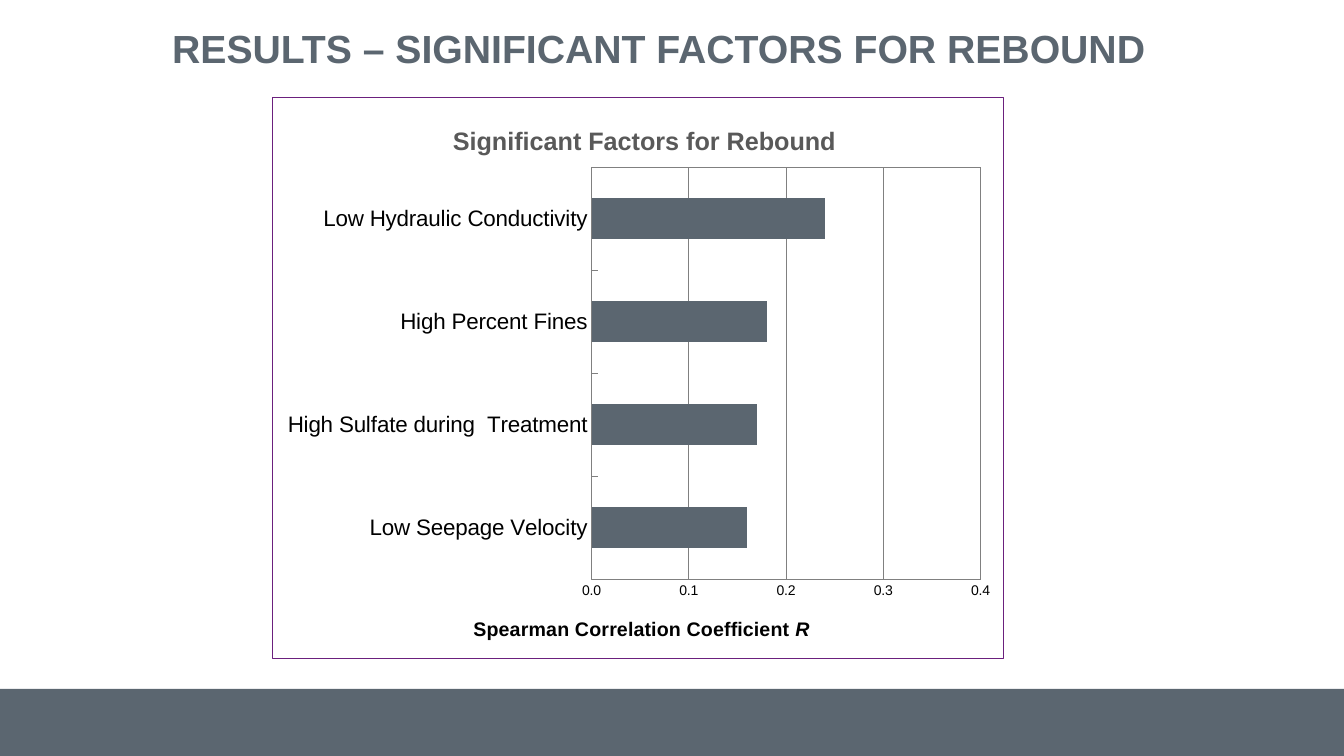
from dataclasses import dataclass

from lxml import etree
from pptx import Presentation
from pptx.chart import data
from pptx.dml import color
from pptx.enum import chart as ch, shapes, text
from pptx.oxml import ns
from pptx.util import Pt

COLORS = {"slate": "5B6670", "purple": "6B207D", "grid": "808080",
          "heading": "595959", "black": "000000", "white": "FFFFFF"}
FONT = "Arial"
W, H = 960, 540
BAND_H = 48


@dataclass
class Factor:
    name: str
    r: float


@dataclass
class Heading:
    runs: list[tuple[str, bool]]
    size: float
    color: str
    x: float
    y: float


FACTORS = [
    Factor("Low Seepage Velocity", 0.16),
    Factor("High Sulfate during  Treatment", 0.17),
    Factor("High Percent Fines", 0.18),
    Factor("Low Hydraulic Conductivity", 0.24),
]
CHART_HEADING = Heading([("Significant Factors for Rebound", False)], 18, "heading", 0.24, 0.04)
AXIS_HEADING = Heading([("Spearman Correlation Coefficient ", False), ("R", True)],
                       14, "black", 0.27, 0.92)


def rgb(name: str) -> color.RGBColor:
    return color.RGBColor.from_string(COLORS[name])


def style(font, *, size: float, color: str = "black", bold: bool = False,
          italic: bool = False) -> None:
    font.name, font.size, font.bold, font.italic = FONT, Pt(size), bold, italic
    font.color.rgb = rgb(color)


def add_text(p, txt: str, **fmt) -> None:
    r = p.add_run()
    r.text = txt
    style(r.font, **fmt)


def set_line(line, name: str) -> None:
    line.color.rgb = rgb(name)
    line.width = Pt(0.75)


def layout(**values: float):
    """Return a manual chart layout given as fractions of the chart frame."""
    el = etree.Element(ns.qn("c:layout"))
    manual = etree.SubElement(el, ns.qn("c:manualLayout"))
    modes = {"xMode": "edge", "yMode": "edge"}
    if "w" in values:
        modes = {"layoutTarget": "inner", **modes}
    for tag, val in {**modes, **values}.items():
        etree.SubElement(manual, ns.qn(f"c:{tag}")).set("val", str(val))
    return el


def outline(name: str):
    """Return chart shape properties with no fill and a thin line."""
    sp = etree.Element(ns.qn("c:spPr"))
    etree.SubElement(sp, ns.qn("a:noFill"))
    ln = etree.SubElement(sp, ns.qn("a:ln"), w=str(Pt(0.75)))
    fill = etree.SubElement(ln, ns.qn("a:solidFill"))
    etree.SubElement(fill, ns.qn("a:srgbClr"), val=COLORS[name])
    return sp


def add_heading(title, h: Heading) -> None:
    p = title.text_frame.paragraphs[0]
    for txt, italic in h.runs:
        add_text(p, txt, size=h.size, color=h.color, bold=True, italic=italic)
    el = title._element
    for old in el.findall(ns.qn("c:layout")):
        el.remove(old)
    el.find(ns.qn("c:tx")).addnext(layout(x=h.x, y=h.y))


def add_band(s) -> None:
    sp = s.shapes.add_shape(shapes.MSO_SHAPE.RECTANGLE, 0, Pt(H - BAND_H), Pt(W), Pt(BAND_H))
    sp.shadow.inherit = False
    sp.fill.solid()
    sp.fill.fore_color.rgb = rgb("slate")
    sp.line.fill.background()


def add_title(s, txt: str) -> None:
    sp = s.shapes.title
    sp.left, sp.top, sp.width, sp.height = Pt(123), Pt(10), Pt(720), Pt(53)
    tf = sp.text_frame
    tf.word_wrap = True
    tf.auto_size = text.MSO_AUTO_SIZE.NONE
    tf.vertical_anchor = text.MSO_ANCHOR.MIDDLE
    tf.margin_left, tf.margin_right = 0, Pt(7.2)
    tf.margin_top = tf.margin_bottom = Pt(3.6)
    p = tf.paragraphs[0]
    p.alignment = text.PP_ALIGN.LEFT
    p.line_spacing = 0.9
    add_text(p, txt, size=28, color="slate", bold=True)


def add_factor_chart(s) -> None:
    cd = data.CategoryChartData(number_format="0.00")
    cd.categories = [f.name for f in FACTORS]
    cd.add_series("Series 1", [f.r for f in FACTORS])
    chart = s.shapes.add_chart(ch.XL_CHART_TYPE.BAR_CLUSTERED, Pt(194.5), Pt(69),
                               Pt(523), Pt(402), cd).chart
    style(chart.font, size=10)
    chart.has_legend = False
    add_heading(chart.chart_title, CHART_HEADING)

    plot = chart.plots[0]
    plot.gap_width = 150
    plot.vary_by_categories = False
    bars = plot.series[0].format
    bars.fill.solid()
    bars.fill.fore_color.rgb = rgb("slate")
    bars.line.fill.background()

    cat, val = chart.category_axis, chart.value_axis
    for ax, size in ((cat, 16), (val, 10)):
        style(ax.tick_labels.font, size=size)
        set_line(ax.format.line, "grid")
        ax.major_tick_mark = ch.XL_TICK_MARK.INSIDE
        ax.minor_tick_mark = ch.XL_TICK_MARK.NONE
    val.minimum_scale, val.maximum_scale, val.major_unit = 0, 0.4, 0.1
    val.tick_labels.number_format = "0.0"
    val.tick_labels.number_format_is_linked = False
    val.has_major_gridlines = True
    set_line(val.major_gridlines.format.line, "grid")
    add_heading(val.axis_title, AXIS_HEADING)

    space = chart._chartSpace
    area = space.find(".//" + ns.qn("c:plotArea"))
    for old in area.findall(ns.qn("c:layout")):
        area.remove(old)
    area.insert(0, layout(x=0.436, y=0.125, w=0.532, h=0.733))
    area.append(outline("grid"))
    space.find(ns.qn("c:txPr")).addprevious(outline("purple"))


def main() -> None:
    prs = Presentation()
    prs.slide_width, prs.slide_height = Pt(W), Pt(H)
    s = prs.slides.add_slide(prs.slide_layouts[5])
    s.background.fill.solid()
    s.background.fill.fore_color.rgb = rgb("white")
    add_band(s)
    add_title(s, "RESULTS – SIGNIFICANT FACTORS FOR REBOUND")
    add_factor_chart(s)
    prs.save("out.pptx")


if __name__ == "__main__":
    main()
